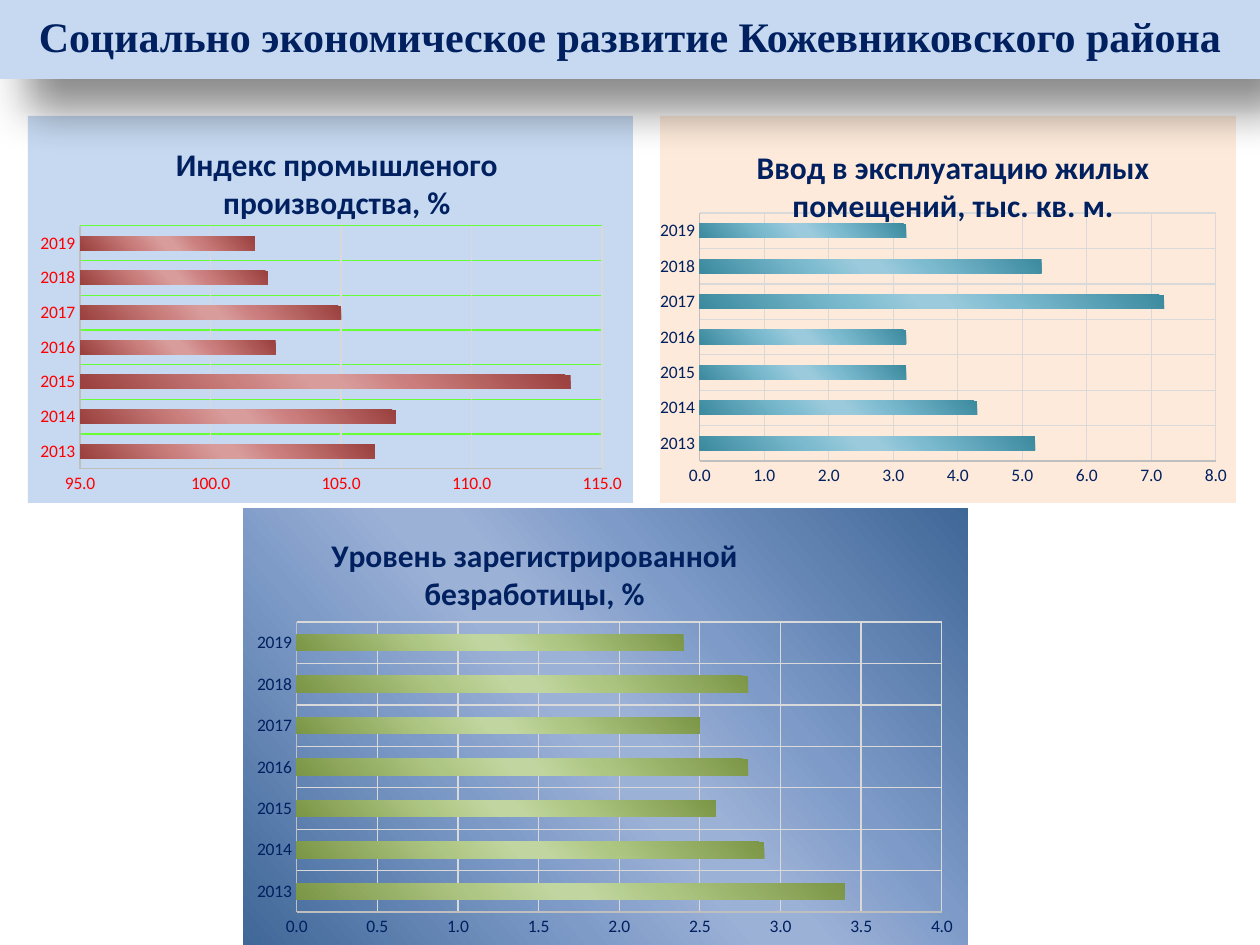
"""Build the slide of district development indicators with three bar charts."""
from dataclasses import dataclass
from typing import Optional, Union

import pptx
import pptx.chart.data
import pptx.dml.color
import pptx.enum.chart
import pptx.enum.text
import pptx.oxml
import pptx.oxml.ns
import pptx.util

Box = tuple[int, int, int, int]
Stops = tuple[str, str, str, str]
RGB = pptx.dml.color.RGBColor.from_string
NS = pptx.oxml.ns.nsdecls("a", "c")
YEARS = [str(year) for year in range(2013, 2020)]


@dataclass(frozen=True)
class Theme:
    """Colours, fonts and type sizes of the slide."""
    navy: str = "002060"
    red: str = "FF0000"
    pale_blue: str = "C6D9F1"
    cream: str = "FDEADA"
    axis: str = "BFBFBF"
    grid: str = "D9D9D9"
    lime: str = "66FF33"
    reds: Stops = ("9A403E", "CA7D7C", "D89C9B", "CA7F7D")
    teals: Stops = ("3C8A9F", "7BBACF", "9ACADC", "7CBBCF")
    greens: Stops = ("7C9647", "ADC682", "C0D59F", "AEC683")
    blues: Stops = ("3F6797", "7D9AC8", "9CB1D6", "7E9BC8")
    heading_font: str = "Times New Roman"
    chart_font: str = "Calibri"
    heading_size: int = 24
    title_size: int = 18
    label_size: int = 10


THEME = Theme()


@dataclass(frozen=True)
class Panel:
    """One bar chart: its boxes in px, values, scale and colours."""
    title: str
    box: Box
    plot: Box
    title_at: tuple[int, int]
    values: list[float]
    scale: tuple[float, float, float]
    bars: Stops
    fill: Union[str, Stops]
    label: str = THEME.navy
    row_grid: str = THEME.grid


PANELS = [
    Panel("Уровень зарегистрированной безработицы, %", (243, 508, 725, 437),
          (297, 622, 645, 290), (326, 528), [3.4, 2.9, 2.6, 2.8, 2.5, 2.8, 2.4],
          (0, 4, 0.5), THEME.greens, THEME.blues),
    Panel("Ввод в эксплуатацию жилых помещений, тыс. кв. м.", (660, 116, 576, 387),
          (700, 213, 516, 248), (751, 140), [5.2, 4.3, 3.2, 3.2, 7.2, 5.3, 3.2],
          (0, 8, 1), THEME.teals, THEME.cream),
    Panel("Индекс промышленого производства, %", (28, 116, 605, 387),
          (80, 226, 522, 243), (170, 137),
          [106.3, 107.1, 113.8, 102.5, 105.0, 102.2, 101.7],
          (95, 115, 5), THEME.reds, THEME.pale_blue, THEME.red, THEME.lime),
]


def px(value: int) -> pptx.util.Emu:
    """Turn px into EMU."""
    return pptx.util.Emu(round(value * 914400 / 126))


def fill_xml(fill: Union[str, Stops]) -> str:
    """Return a solid fill, or a slanted gradient, as XML."""
    if isinstance(fill, str):
        return f'<a:solidFill {NS}><a:srgbClr val="{fill}"/></a:solidFill>'
    edge, near, core, far = fill
    stops = zip((0, 33, 47, 53, 68, 100), (edge, near, core, core, far, edge))
    marks = "".join(f'<a:gs pos="{pos * 1000}"><a:srgbClr val="{color}"/></a:gs>'
                    for pos, color in stops)
    return (f'<a:gradFill {NS} rotWithShape="1"><a:gsLst>{marks}</a:gsLst>'
            f'<a:lin ang="{139 * 60000}" scaled="0"/></a:gradFill>')


def layout_xml(panel: Panel, left: int, top: int, size: Optional[tuple[int, int]] = None):
    """Return a manual chart layout for a place given in slide px."""
    x, y, width, height = panel.box
    parts = {"x": (left - x) / width, "y": (top - y) / height}
    if size:
        parts.update(w=size[0] / width, h=size[1] / height)
    target = '<c:layoutTarget val="inner"/>' if size else ""
    modes = '<c:xMode val="edge"/><c:yMode val="edge"/>'
    marks = "".join(f'<c:{key} val="{part:.3f}"/>' for key, part in parts.items())
    return pptx.oxml.parse_xml(
        f"<c:layout {NS}><c:manualLayout>{target}{modes}{marks}</c:manualLayout></c:layout>")


def set_layout(parent, layout) -> None:
    """Replace the layout of a chart title or plot area."""
    tag = pptx.oxml.ns.qn("c:layout")
    for old in parent.findall(tag):
        parent.remove(old)
    text = parent.find(pptx.oxml.ns.qn("c:tx"))
    if text is None:
        parent.insert(0, layout)
    else:
        text.addnext(layout)


def style_axis(axis, label: str, grid: str) -> None:
    """Set the lines, grid and labels of an axis."""
    axis.major_tick_mark = axis.minor_tick_mark = pptx.enum.chart.XL_TICK_MARK.NONE
    axis.has_major_gridlines = True
    for line, color in ((axis.format.line, THEME.axis),
                        (axis.major_gridlines.format.line, grid)):
        line.color.rgb = RGB(color)
        line.width = pptx.util.Pt(0.75)
    style_font(axis.tick_labels.font, THEME.label_size, label)


def style_font(font, size: int, color: str, name: str = THEME.chart_font,
               bold: bool = False) -> None:
    """Set face, size, weight and colour."""
    font.name, font.size, font.bold = name, pptx.util.Pt(size), bold
    font.color.rgb = RGB(color)


def add_panel(slide, panel: Panel) -> None:
    """Draw one bar chart."""
    data = pptx.chart.data.CategoryChartData(number_format="0.0")
    data.categories = YEARS
    data.add_series(panel.title, panel.values)
    chart = slide.shapes.add_chart(pptx.enum.chart.XL_CHART_TYPE.BAR_CLUSTERED,
                                   *map(px, panel.box), data).chart
    chart.has_legend = False
    style_font(chart.font, THEME.label_size, panel.label)
    chart.has_title = True
    p = chart.chart_title.text_frame.paragraphs[0]
    p.text = panel.title
    style_font(p.font, THEME.title_size, THEME.navy, bold=True)

    plot = chart.plots[0]
    plot.gap_width, plot.vary_by_categories = 150, False
    fmt = plot.series[0].format
    fmt.fill.background()
    sppr = plot.series[0]._element.spPr
    sppr.replace(sppr[0], pptx.oxml.parse_xml(fill_xml(panel.bars)))

    style_axis(chart.category_axis, panel.label, panel.row_grid)
    axis = chart.value_axis
    style_axis(axis, panel.label, THEME.grid)
    axis.minimum_scale, axis.maximum_scale, axis.major_unit = panel.scale
    axis.tick_labels.number_format = "0.0"
    axis.tick_labels.number_format_is_linked = False

    root = chart._chartSpace.chart
    set_layout(chart.chart_title._element, layout_xml(panel, *panel.title_at))
    set_layout(root.plotArea, layout_xml(panel, *panel.plot[:2], panel.plot[2:]))
    root.addnext(pptx.oxml.parse_xml(
        f"<c:spPr {NS}>{fill_xml(panel.fill)}<a:ln><a:noFill/></a:ln></c:spPr>"))


def add_heading(slide, text: str) -> None:
    """Format the title as a shadowed band above the charts."""
    sp = slide.shapes.title
    sp.left, sp.top, sp.width, sp.height = map(px, (0, 0, 1260, 79))
    sp.fill.solid()
    sp.fill.fore_color.rgb = RGB(THEME.pale_blue)
    sp._element.spPr.append(pptx.oxml.parse_xml(
        f'<a:effectLst {NS}><a:outerShdw blurRad="330200" dist="297180" dir="3012000" '
        'algn="tl" rotWithShape="0"><a:srgbClr val="000000"><a:alpha val="45000"/>'
        "</a:srgbClr></a:outerShdw></a:effectLst>"))
    tf = sp.text_frame
    tf.text = text
    tf.word_wrap = True
    tf.auto_size = pptx.enum.text.MSO_AUTO_SIZE.NONE
    tf.vertical_anchor = pptx.enum.text.MSO_ANCHOR.MIDDLE
    tf.margin_top, tf.margin_bottom = px(6), px(14)
    p = tf.paragraphs[0]
    p.alignment = pptx.enum.text.PP_ALIGN.CENTER
    style_font(p.font, THEME.heading_size, THEME.navy, THEME.heading_font, True)
    slide.shapes._spTree.append(sp._element)


def main() -> None:
    """Build and save the slide."""
    prs = pptx.Presentation()
    prs.slide_width, prs.slide_height = px(1260), px(945)
    slide = prs.slides.add_slide(prs.slide_layouts[5])
    for panel in PANELS:
        add_panel(slide, panel)
    add_heading(slide, "Социально экономическое развитие Кожевниковского района")
    prs.save("out.pptx")


if __name__ == "__main__":
    main()
